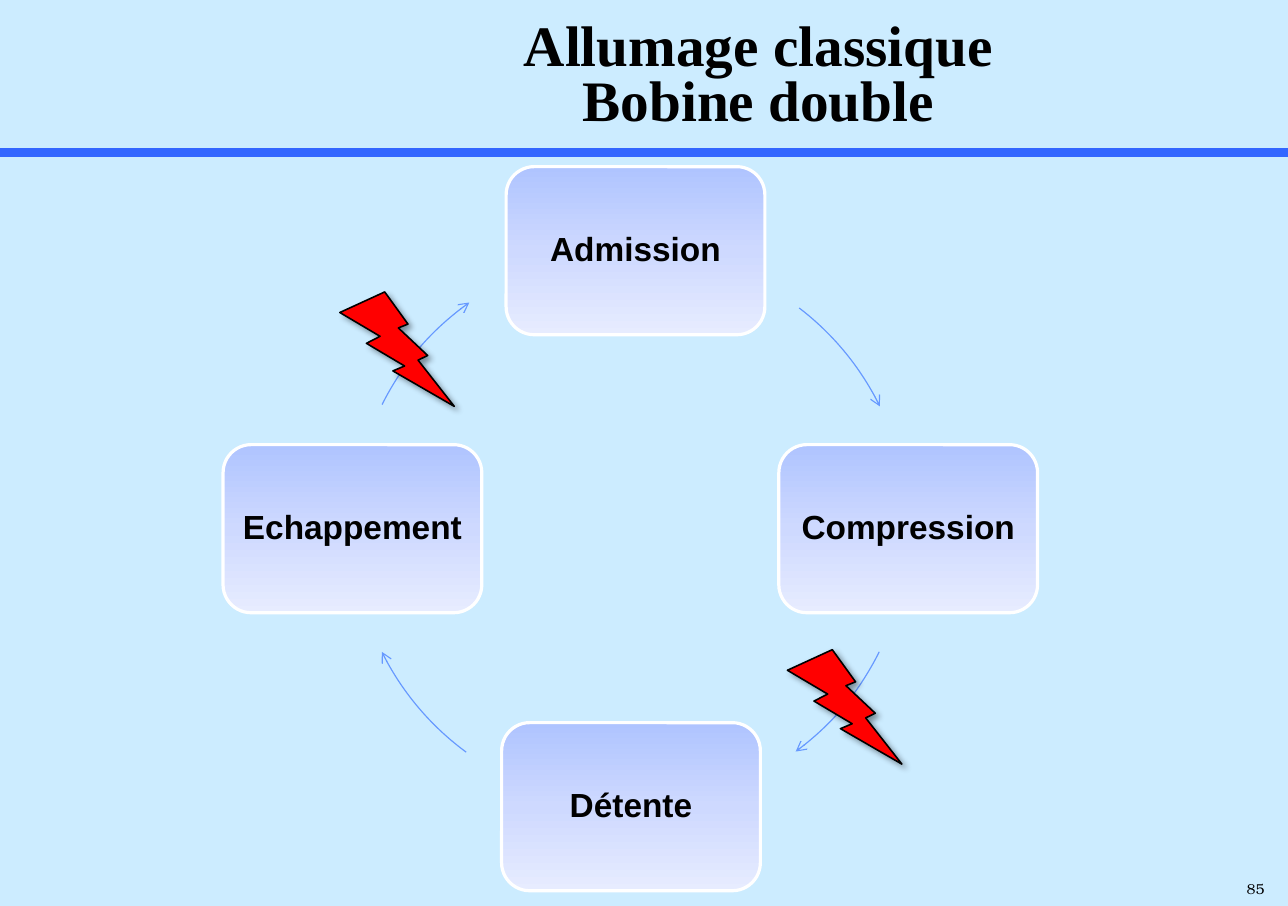
from copy import deepcopy

from lxml import etree
from pptx import Presentation
from pptx.dml.color import RGBColor
from pptx.enum.shapes import MSO_CONNECTOR, MSO_SHAPE
from pptx.enum.text import MSO_ANCHOR, PP_ALIGN
from pptx.oxml.ns import qn
from pptx.util import Cm, Pt

ROUNDED, ARC, BOLT = MSO_SHAPE.ROUNDED_RECTANGLE, MSO_SHAPE.ARC, MSO_SHAPE.LIGHTNING_BOLT
STRAIGHT = MSO_CONNECTOR.STRAIGHT
MIDDLE = MSO_ANCHOR.MIDDLE
LEFT, CENTER = PP_ALIGN.LEFT, PP_ALIGN.CENTER

SKY = RGBColor(0xCC, 0xEC, 0xFF)
RULE_BLUE = RGBColor(0x33, 0x66, 0xFF)
ARROW_BLUE = RGBColor(0x66, 0x99, 0xFF)
CARD_COLORS = [
    RGBColor(0xAF, 0xC4, 0xFF),
    RGBColor(0xCE, 0xD9, 0xFF),
    RGBColor(0xE7, 0xEC, 0xFF),
]
WHITE = RGBColor(0xFF, 0xFF, 0xFF)
BLACK = RGBColor(0x00, 0x00, 0x00)
RED = RGBColor(0xFF, 0x00, 0x00)

TITLE_FONT = {"name": "Times New Roman", "size": Pt(36), "bold": True}
CARD_FONT = {"name": "Arial", "size": Pt(21), "bold": True}
NUMBER_FONT = {"name": "TeX Gyre Bonum", "size": Pt(9), "bold": False}


def write(box, text, font, align, spacing, inset):
    frame = box.text_frame
    frame_format = {
        "word_wrap": True,
        "vertical_anchor": MIDDLE,
        "margin_left": Cm(inset),
        "margin_right": Cm(inset),
    }
    for name, value in frame_format.items():
        setattr(frame, name, value)
    para = frame.paragraphs[0]
    para.text = text
    para.alignment = align
    para.line_spacing = spacing
    for span in para.runs:
        for name, value in font.items():
            setattr(span.font, name, value)
        span.font.color.rgb = BLACK


def outline(shape, color, width):
    shape.line.color.rgb = color
    shape.line.width = Pt(width)


deck = Presentation()
deck.slide_width, deck.slide_height = Pt(810), Pt(570)
page = deck.slides.add_slide(deck.slide_layouts[6])
page.background.fill.solid()
page.background.fill.fore_color.rgb = SKY

rule = page.shapes.add_connector(STRAIGHT, Cm(0), Cm(3.38), deck.slide_width, Cm(3.38))
outline(rule, RULE_BLUE, 6)
etree.SubElement(rule._element.spPr, qn("a:effectLst"))

number = page.shapes.add_textbox(Cm(27.38), Cm(19.42), Cm(1.19), Cm(0.68))
write(number, "85", NUMBER_FONT, LEFT, 0.75, 0.28)

strokes = [
    ("Admission", 11.23, 3.7),
    ("Compression", 17.28, 9.87),
    ("Détente", 11.13, 16.04),
    ("Echappement", 4.95, 9.87),
]
for stroke, left, top in strokes:
    card = page.shapes.add_shape(ROUNDED, Cm(left), Cm(top), Cm(5.74), Cm(3.73))
    card.shadow.inherit = False
    card.fill.gradient()
    card.fill.gradient_angle = 270
    stops = card._element.spPr.find(".//" + qn("a:gsLst"))
    middle_stop = deepcopy(stops[0])
    middle_stop.set("pos", "50000")
    stops.insert(1, middle_stop)
    for stop, color in zip(card.fill.gradient_stops, CARD_COLORS):
        stop.color.rgb = color
    outline(card, WHITE, 2)
    write(card, stroke, CARD_FONT, CENTER, 0.9, 0.25)

arrow_angles = [(307.4, 333.9), (26.4, 53.5), (126.3, 153.6), (206.5, 234.5)]
for angles in arrow_angles:
    arrow = page.shapes.add_shape(ARC, Cm(7.83), Cm(5.57), Cm(12.32), Cm(12.32))
    arrow.shadow.inherit = False
    arrow.fill.background()
    for index, degrees in enumerate(angles):
        arrow.adjustments[index] = degrees * 0.6
    outline(arrow, ARROW_BLUE, 0.75)
    etree.SubElement(arrow.line._get_or_add_ln(), qn("a:tailEnd"), type="arrow")

title = page.shapes.add_textbox(Cm(5.08), Cm(0.36), Cm(23.49), Cm(2.74))
write(title, "Allumage classique\vBobine double", TITLE_FONT, CENTER, 0.8, 0.28)

for left, top in [(17.47, 14.42), (7.54, 6.48)]:
    spark = page.shapes.add_shape(BOLT, Cm(left), Cm(top), Cm(2.54), Cm(2.54))
    spark.shadow.inherit = False
    spark.fill.solid()
    spark.fill.fore_color.rgb = RED
    outline(spark, BLACK, 1)
    effects = spark._element.spPr.find(qn("a:effectLst"))
    shadow = etree.SubElement(
        effects, qn("a:outerShdw"), blurRad=str(Pt(4)), dist=str(Pt(3)),
        dir="2700000", algn="tl", rotWithShape="0",
    )
    shade = etree.SubElement(shadow, qn("a:srgbClr"), val=str(BLACK))
    etree.SubElement(shade, qn("a:alpha"), val="40000")

deck.save("out.pptx")
